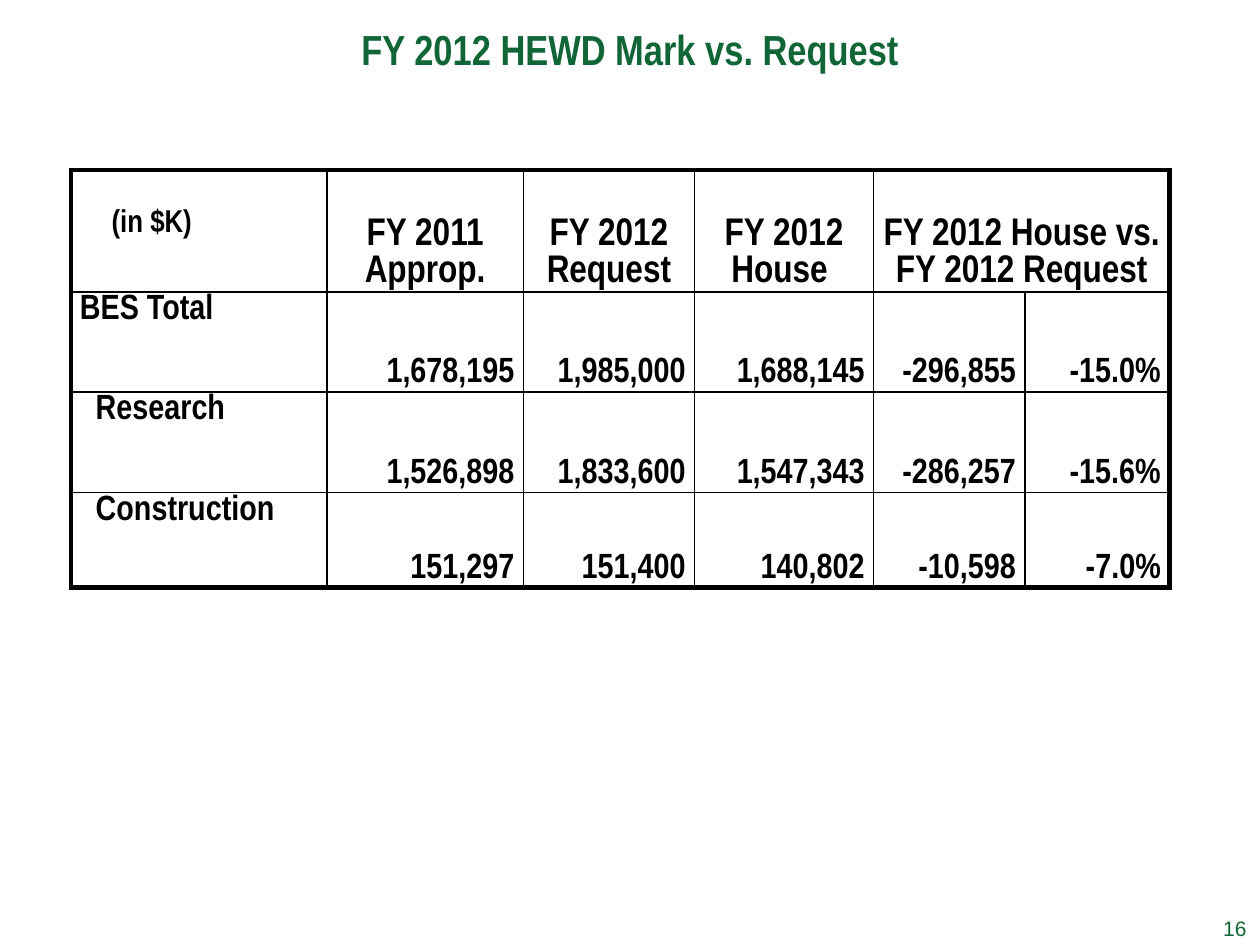
from lxml.etree import SubElement
from pptx import Presentation
from pptx.dml.color import RGBColor
from pptx.enum.text import MSO_ANCHOR as Anchor, PP_ALIGN as Align
from pptx.oxml.ns import qn
from pptx.util import Cm, Pt

GREEN = RGBColor(0x10, 0x66, 0x36)
BLACK = RGBColor(0, 0, 0)
NARROW = "Arial Narrow"
THIN, THICK = Pt(1), Pt(3)

COLUMN_WIDTHS = [5.16, 3.96, 3.45, 3.61, 3.05, 2.92]
ROW_HEIGHTS = [2.46, 2.01, 2.03, 1.92]
BUDGET = [
    ["(in $K)", "FY\u00a02011 Approp.", "FY\u00a02012 Request", "FY\u00a02012 House ",
     "FY\u00a02012 House vs. FY\u00a02012 Request", ""],
    ["BES Total", "1,678,195", "1,985,000", "1,688,145", "-296,855", "-15.0%"],
    ["Research", "1,526,898", "1,833,600", "1,547,343", "-286,257", "-15.6%"],
    ["Construction", "151,297", "151,400", "140,802", "-10,598", "-7.0%"],
]
LABEL_INDENTS = [0.64, 0, 0.32, 0.32]


def style_font(paragraph, size, color, name=NARROW, bold=True):
    font = paragraph.font
    font.name, font.size, font.bold = name, Pt(size), bold
    font.color.rgb = color


def add_label(slide, text, left, top, width, height, anchor, align, wrap, **style):
    frame = slide.shapes.add_textbox(Cm(left), Cm(top), Cm(width), Cm(height)).text_frame
    frame.word_wrap = wrap
    frame.vertical_anchor = anchor
    paragraph = frame.paragraphs[0]
    paragraph.text = text
    paragraph.alignment = align
    style_font(paragraph, **style)


def set_borders(cell, row, column):
    """Thick on the outside of the table, thin between cells."""
    last_column = column + cell.span_width - 1
    on_edge = {
        "a:lnL": column == 0,
        "a:lnR": last_column == len(COLUMN_WIDTHS) - 1,
        "a:lnT": row == 0,
        "a:lnB": row == len(ROW_HEIGHTS) - 1,
    }
    properties = cell._tc.get_or_add_tcPr()
    for position, (tag, outer) in enumerate(on_edge.items()):
        line = SubElement(properties, qn(tag), w=str(THICK if outer else THIN))
        SubElement(SubElement(line, qn("a:solidFill")), qn("a:srgbClr"), val=str(BLACK))
        properties.insert(position, line)


def fill_cell(cell, text, row, column):
    is_header, is_label = row == 0, column == 0
    cell.fill.background()
    cell.margin_left = cell.margin_right = Cm(0.18)
    cell.margin_top = cell.margin_bottom = Cm(0.04)
    paragraph = cell.text_frame.paragraphs[0]
    paragraph.text = text
    paragraph.space_after = Pt(3)
    size = 22 if is_header else 20
    if is_label:
        cell.vertical_anchor = Anchor.TOP
        cell.margin_left += Cm(LABEL_INDENTS[row])
        paragraph.alignment = Align.LEFT
        if is_header:
            cell.margin_top = Cm(0.79)
            size = 18
    else:
        cell.vertical_anchor = Anchor.BOTTOM
        paragraph.alignment = Align.CENTER if is_header else Align.RIGHT
    style_font(paragraph, size, BLACK)


def add_budget_table(slide):
    table = slide.shapes.add_table(
        len(ROW_HEIGHTS), len(COLUMN_WIDTHS), Cm(1.43), Cm(3.43),
        Cm(sum(COLUMN_WIDTHS)), Cm(sum(ROW_HEIGHTS))).table
    table.first_row = table.horz_banding = False
    for column, width in zip(table.columns, COLUMN_WIDTHS):
        column.width = Cm(width)
    for row, height in zip(table.rows, ROW_HEIGHTS):
        row.height = Cm(height)
    table.cell(0, 4).merge(table.cell(0, 5))
    for row, texts in enumerate(BUDGET):
        for column, text in enumerate(texts):
            cell = table.cell(row, column)
            if not cell.is_spanned:
                fill_cell(cell, text, row, column)
                set_borders(cell, row, column)


def main():
    deck = Presentation()
    deck.slide_width, deck.slide_height = Cm(25.4), Cm(19.05)
    slide = deck.slides.add_slide(deck.slide_layouts[6])
    add_label(slide, "FY 2012 HEWD Mark vs. Request", 0, -0.61, 25.4, 3.18,
              Anchor.MIDDLE, Align.CENTER, True, size=24, color=GREEN)
    add_budget_table(slide)
    add_label(slide, "16", 24.41, 18.34, 1.07, 0.94, Anchor.TOP, Align.LEFT, False,
              size=12, color=GREEN, name="Arial", bold=False)
    deck.save("out.pptx")


if __name__ == "__main__":
    main()
